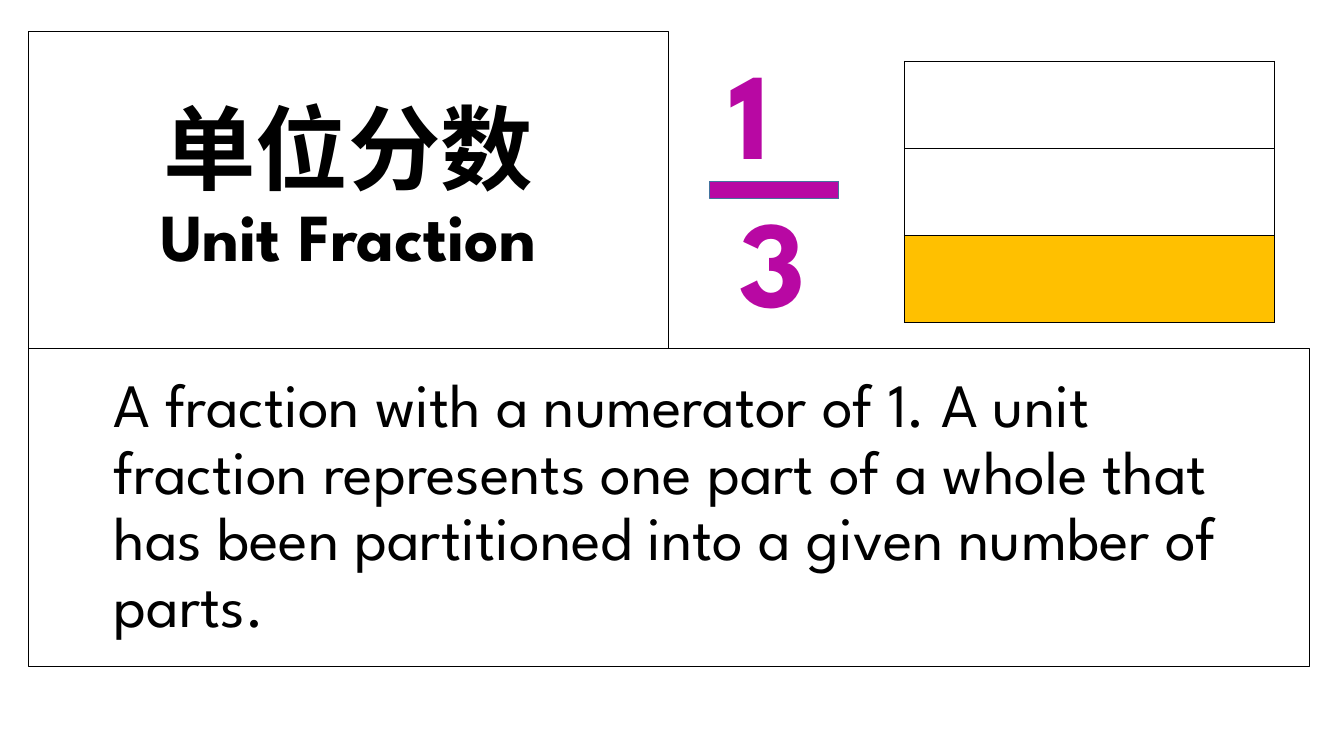
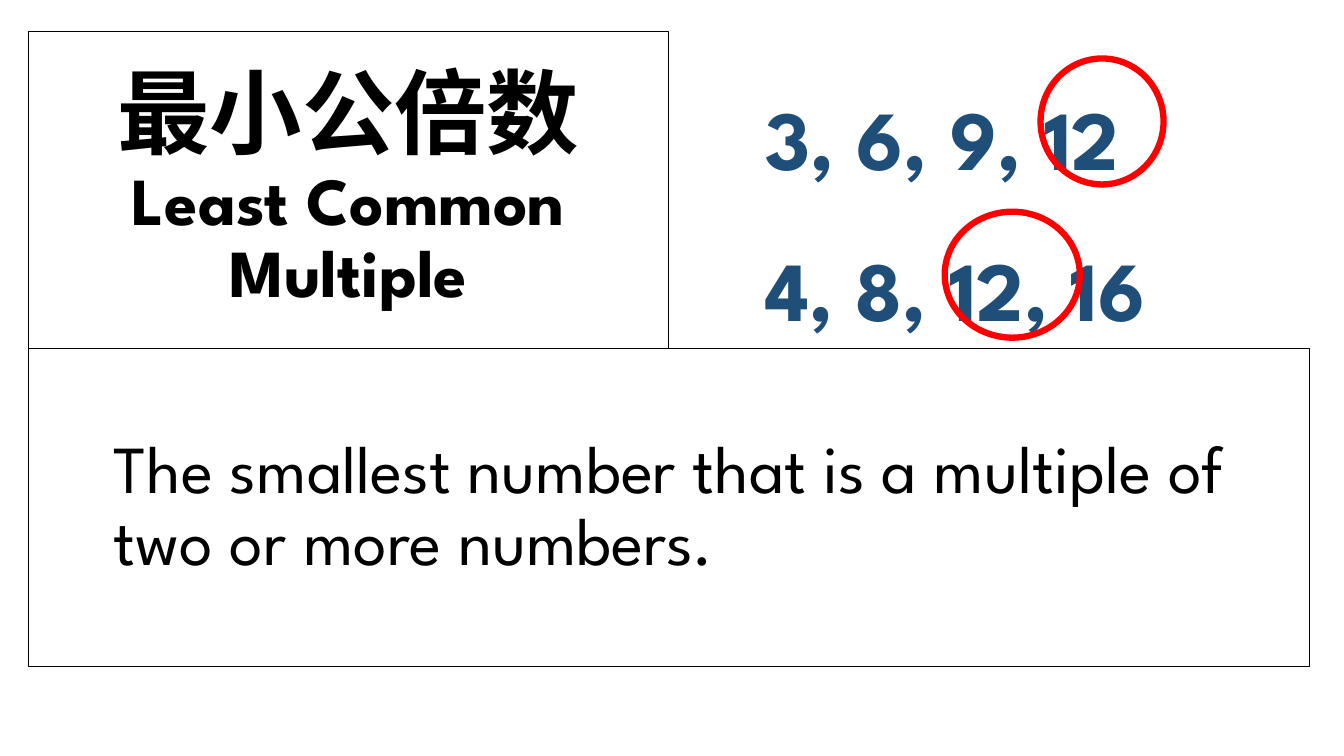
import pptx
import pptx.dml.color
import pptx.enum.shapes
import pptx.enum.text
import pptx.oxml
import pptx.oxml.ns
import pptx.util

PX = 9144  # EMU in one px, 100 px to the inch
HEX = {"ink": "000000", "plum": "B808A3", "edge": "43739E",
       "gold": "FFC000", "navy": "1F4E79", "red": "FF0000"}
SANS, HAN = "League Spartan", "Roboto"
SHAPE = pptx.enum.shapes.MSO_SHAPE
ALIGN = pptx.enum.text.PP_ALIGN
LEFT, TOP, TALL = 28, 31, 315


def tint(name):
    return pptx.dml.color.RGBColor.from_string(HEX[name])


def draw(slide, kind, box, line, width, fill=None):
    shape = slide.shapes.add_shape(kind, *[n * PX for n in box])
    shape.shadow.inherit = False
    if fill:
        shape.fill.solid()
        shape.fill.fore_color.rgb = tint(fill)
    else:
        shape.fill.background()
    shape.line.color.rgb = tint(line)
    shape.line.width = pptx.util.Pt(width)
    return shape


def write(frame, rows, color, bold, gap, align=ALIGN.LEFT):
    """Fill a frame; each row is an indent and its runs (text, size, font), one run to a line."""
    frame.word_wrap = True
    for i, (indent, runs) in enumerate(rows):
        para = frame.add_paragraph() if i else frame.paragraphs[0]
        para.alignment, para.line_spacing = align, gap
        prop = para._p.get_or_add_pPr()
        prop.set("marL", str(indent * PX))
        prop.set("indent", "0")
        for j, (text, size, face) in enumerate(runs):
            if j:
                para.add_line_break()
            run = para.add_run()
            run.text = text
            run.font.size = pptx.util.Pt(size)
            run.font.name, run.font.bold = face, bold
            run.font.color.rgb = tint(color)


deck = pptx.Presentation()
deck.slide_width, deck.slide_height = 1333 * PX, 750 * PX

terms = [
    {"han": "单位分数", "name": "Unit Fraction", "size": 44,
     "text": "A fraction with a numerator of 1. A unit fraction represents one part "
             "of a whole that has been partitioned into a given number of parts.",
     "box": (693, TOP, 213, 306), "color": "plum", "gap": 1.0,
     "rows": [(21, [("1", 88, SANS)]), (31, [("3", 88, SANS)])]},
    {"han": "最小公倍数", "name": "Least Common Multiple", "size": 48,
     "text": "The smallest number that is a multiple of two or more numbers.",
     "box": (749, TOP, 501, 313), "color": "navy", "gap": 1.5,
     "rows": [(0, [("3, 6, 9, 12", 60, SANS)]), (0, [("4, 8, 12, 16", 60, SANS)])]},
]

# Shared card: heading, definition and example text
slides = []
for term in terms:
    slide = deck.slides.add_slide(deck.slide_layouts[6])
    slides.append(slide)
    head = draw(slide, SHAPE.RECTANGLE, (LEFT, TOP, 635, TALL), "ink", 0.75)
    write(head.text_frame, [(0, [(term["han"], 66, HAN), (term["name"], 48, SANS)])],
          "ink", True, 0.9, ALIGN.CENTER)
    body = draw(slide, SHAPE.RECTANGLE, (LEFT, TOP + TALL, 1271, TALL), "ink", 0.75)
    write(body.text_frame, [(75, [(term["text"], term["size"], SANS)])], "ink", False, 0.9)
    for shape in (head, body):
        shape.text_frame.vertical_anchor = pptx.enum.text.MSO_ANCHOR.MIDDLE
    note = slide.shapes.add_textbox(*[n * PX for n in term["box"]])
    write(note.text_frame, term["rows"], term["color"], True, term["gap"])
    note.text_frame.auto_size = pptx.enum.text.MSO_AUTO_SIZE.SHAPE_TO_FIT_TEXT

# Unit fraction: bar between the numbers, and one third shaded
unit, least = slides
draw(unit, SHAPE.MATH_MINUS, (681, 152, 174, 73), "edge", 1, "plum")
table = unit.shapes.add_table(3, 1, 897 * PX, 61 * PX, 367 * PX, 259 * PX).table
table.first_row = table.horz_banding = False
for i in range(3):
    cell = table.cell(i, 0)
    prop = cell._tc.get_or_add_tcPr()
    for side in ("lnL", "lnR", "lnT", "lnB"):
        prop.append(pptx.oxml.parse_xml(
            f'<a:{side} {pptx.oxml.ns.nsdecls("a")} w="12700"><a:solidFill>'
            f'<a:srgbClr val="{HEX["ink"]}"/></a:solidFill></a:{side}>'))
    if i == 2:
        cell.fill.solid()
        cell.fill.fore_color.rgb = tint("gold")
    else:
        cell.fill.background()

# Least common multiple: rings around the shared number
for box in ((1032, 58, 122, 125), (937, 210, 134, 125)):
    draw(least, SHAPE.OVAL, box, "red", 4.5)

deck.save("out.pptx")
